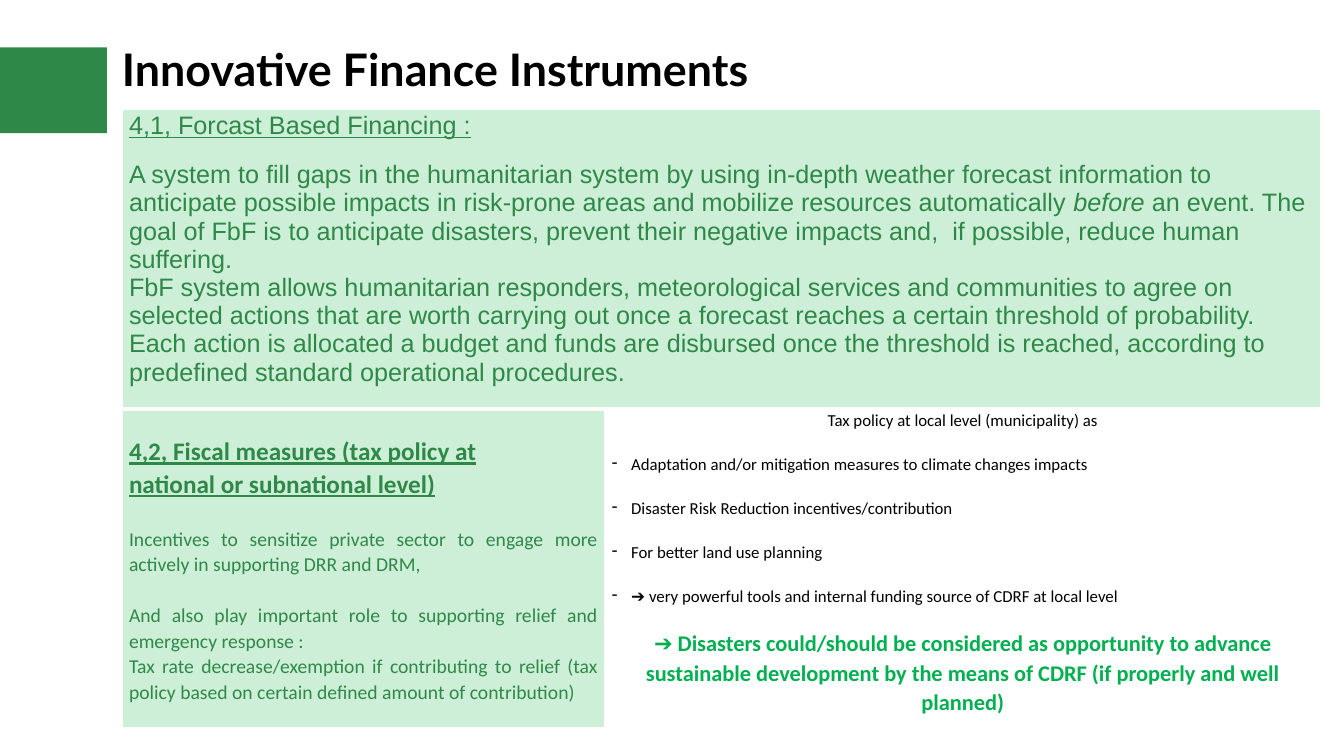
import lxml.etree
import pptx
import pptx.dml.color
import pptx.enum.shapes
import pptx.enum.text
import pptx.oxml.ns
import pptx.util

Inches = pptx.util.Inches
Pt = pptx.util.Pt
ALIGN = pptx.enum.text.PP_ALIGN
qn = pptx.oxml.ns.qn


def rgb(code):
    """Turn a hex string into a colour."""
    return pptx.dml.color.RGBColor.from_string(code)


class FinanceSlide:
    """Hold the style and the current slide."""

    GREEN, PALE, BRIGHT, WHITE, BLACK = "2E8948", "CEEFD7", "00B050", "FFFFFF", "000000"

    def __init__(self, deck):
        """Add a title-only slide to the deck."""
        self.slide = deck.slides.add_slide(deck.slide_layouts[5])

    def block(self, left, top, width, height):
        """Draw the plain green block."""
        shape = self.slide.shapes.add_shape(
            pptx.enum.shapes.MSO_SHAPE.RECTANGLE, *map(Inches, (left, top, width, height)))
        shape.shadow.inherit = False
        shape.fill.solid()
        shape.fill.fore_color.rgb = rgb(self.GREEN)
        shape.line.fill.background()

    def title(self, text, left, top, width, height):
        """Place and format the title."""
        title = self.slide.shapes.title
        title.left, title.top, title.width, title.height = map(Inches, (left, top, width, height))
        frame = title.text_frame
        frame.word_wrap = True
        frame.auto_size = pptx.enum.text.MSO_AUTO_SIZE.NONE
        frame.vertical_anchor = pptx.enum.text.MSO_ANCHOR.TOP
        frame.margin_left = frame.margin_top = frame.margin_bottom = 0
        frame.margin_right = Inches(0.1)
        self.set_paragraph(frame.paragraphs[0], [text], size=32, font="Lato", color=self.BLACK,
                           bold=True, spacing=0.9)

    def table(self, left, top, widths, heights):
        """Add an unstyled table with the given columns and rows."""
        table = self.slide.shapes.add_table(
            len(heights), len(widths), Inches(left), Inches(top),
            Inches(sum(widths)), Inches(sum(heights))).table
        table.first_row = table.horz_banding = False
        for column, width in zip(table.columns, widths):
            column.width = Inches(width)
        for row, height in zip(table.rows, heights):
            row.height = Inches(height)
        return table

    def cell(self, cell, fill, bottom=1):
        """Set the borders, margins and fill of a cell."""
        props = cell._tc.get_or_add_tcPr()
        for side, width in (("L", 1), ("R", 1), ("T", 1), ("B", bottom)):
            line = lxml.etree.SubElement(props, qn("a:ln" + side), w=str(Pt(width)))
            paint = lxml.etree.SubElement(line, qn("a:solidFill"))
            lxml.etree.SubElement(paint, qn("a:srgbClr"), val=self.WHITE)
        cell.fill.solid()
        cell.fill.fore_color.rgb = rgb(fill)
        cell.margin_left = cell.margin_right = Inches(0.07)
        cell.margin_top = cell.margin_bottom = 0

    def fill_cell(self, cell, entries, **common):
        """Set one paragraph per entry, each with its own options."""
        frame = cell.text_frame
        for index, (runs, options) in enumerate(entries):
            paragraph = frame.add_paragraph() if index else frame.paragraphs[0]
            self.set_paragraph(paragraph, runs, **{**common, **options})

    def set_paragraph(self, paragraph, runs, size, font, color, bold=False, underline=False,
                      align=ALIGN.LEFT, spacing=1.07, before=0, bullet=None):
        """Fill a paragraph whose every second run is italic."""
        paragraph.alignment = align
        paragraph.line_spacing = spacing
        paragraph.space_before = Pt(before)
        if bullet:
            props = paragraph._p.get_or_add_pPr()
            props.set("marL", str(Inches(0.19)))
            props.set("indent", str(-Inches(0.19)))
            lxml.etree.SubElement(props, qn("a:buChar"), char=bullet)
        for index, text in enumerate(runs):
            run = paragraph.add_run()
            run.text = text
            run.font.name, run.font.size = font, Pt(size)
            run.font.bold, run.font.underline = bold, underline
            run.font.italic = index % 2 == 1
            run.font.color.rgb = rgb(color)


def main():
    """Build the slide and save it."""
    deck = pptx.Presentation()
    deck.slide_width, deck.slide_height = Inches(13.33), Inches(7.5)
    page = FinanceSlide(deck)
    page.block(-0.14, 0.47, 1.2, 0.85)
    page.title("Innovative Finance Instruments", 1.21, 0.47, 11.5, 0.4)

    table = page.table(1.21, 1.09, [4.79, 7.1], [2.97, 3.16])
    forecast, fiscal, local = table.cell(0, 0), table.cell(1, 0), table.cell(1, 1)
    forecast.merge(table.cell(0, 1))
    page.cell(forecast, page.PALE, bottom=3)
    page.cell(table.cell(0, 1), page.PALE, bottom=3)
    page.cell(fiscal, page.PALE)
    page.cell(local, page.WHITE)

    page.fill_cell(forecast, [
        (["4,1, Forcast Based Financing :"], dict(underline=True, spacing=1.07)),
        (["A system to fill gaps in the humanitarian system by using in-depth weather forecast "
          "information to anticipate possible impacts in risk-prone areas and mobilize resources "
          "automatically ", "before",
          " an event. The goal of FbF is to anticipate disasters, prevent their negative impacts "
          "and,  if possible, reduce human suffering."], dict(before=14.8)),
        (["FbF system allows humanitarian responders, meteorological services and communities to "
          "agree on selected actions that are worth carrying out once a forecast reaches a certain "
          "threshold of probability. Each action is allocated a budget and funds are disbursed once "
          "the threshold is reached, according to predefined standard operational procedures."], {}),
    ], size=18, font="Arial", color=page.GREEN, spacing=1.0)

    heading = dict(size=18, bold=True, underline=True, align=ALIGN.LEFT)
    fiscal.margin_top = Inches(0.25)
    page.fill_cell(fiscal, [
        (["4,2, Fiscal measures (tax policy at"], heading),
        (["national or subnational level)"], heading),
        (["Incentives to sensitize private sector to engage more actively in supporting DRR "
          "and DRM,"], dict(before=18.3)),
        (["And also play important role to supporting relief and emergency response :"],
         dict(before=18.3)),
        (["Tax rate decrease/exemption if contributing to relief (tax policy based on certain "
          "defined amount of contribution)"], {}),
    ], size=14, font="Calibri", color=page.GREEN, align=ALIGN.JUSTIFY)

    measures = [
        "Adaptation and/or mitigation measures to climate changes impacts",
        "Disaster Risk Reduction incentives/contribution",
        "For better land use planning",
        "➔ very powerful tools and internal funding source of CDRF at local level",
    ]
    page.fill_cell(local, [
        (["Tax policy at local level (municipality) as"], dict(align=ALIGN.CENTER, before=0)),
        *[([measure], dict(bullet="-")) for measure in measures],
        (["➔ Disasters could/should be considered as opportunity to advance sustainable "
          "development by the means of CDRF (if properly and well planned)"],
         dict(size=16, bold=True, color=page.BRIGHT, align=ALIGN.CENTER)),
    ], size=12, font="Calibri", color=page.BLACK, before=15.7)

    deck.save("out.pptx")


if __name__ == "__main__":
    main()
